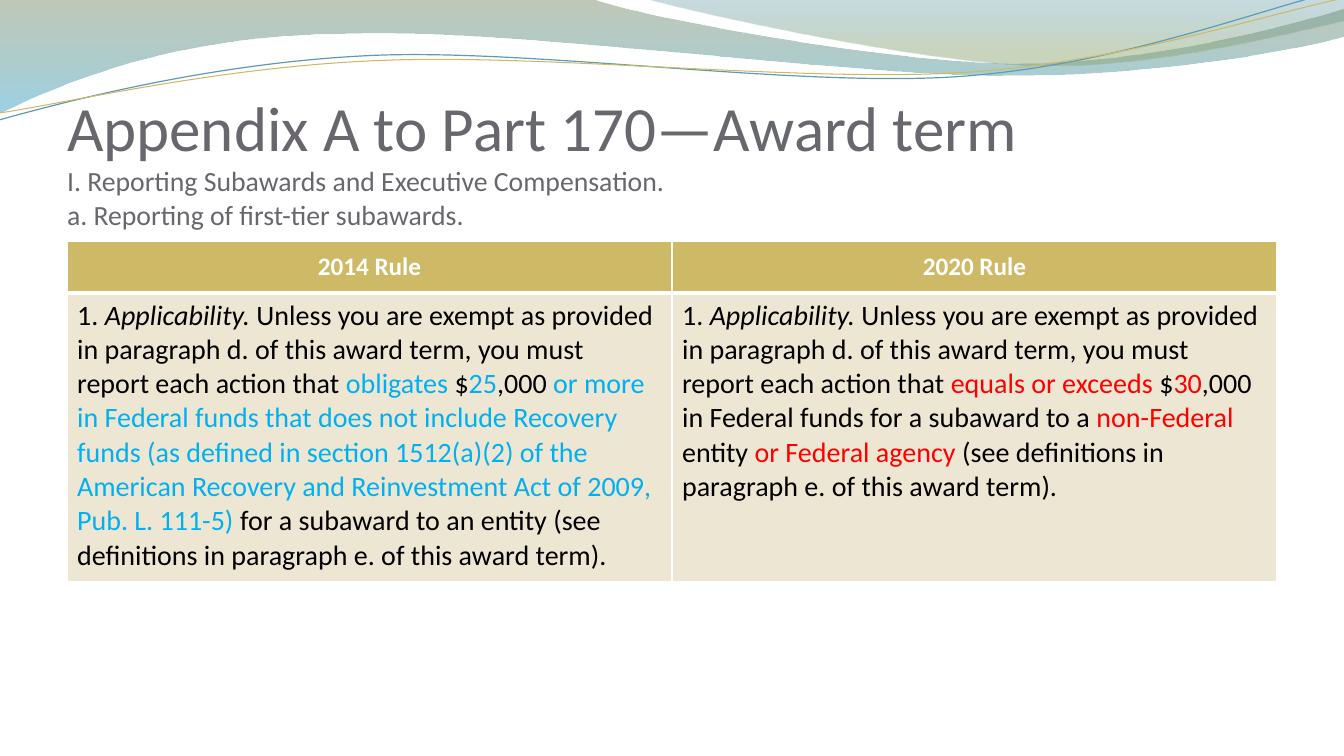
from lxml import etree
from pptx import Presentation
from pptx.dml.color import RGBColor
from pptx.enum.text import MSO_ANCHOR, MSO_AUTO_SIZE, PP_ALIGN
from pptx.oxml.ns import qn
from pptx.util import Inches, Pt

LEFT, CENTER = PP_ALIGN.LEFT, PP_ALIGN.CENTER
TOP, MIDDLE, BOTTOM = MSO_ANCHOR.TOP, MSO_ANCHOR.MIDDLE, MSO_ANCHOR.BOTTOM
NO_AUTOFIT = MSO_AUTO_SIZE.NONE

COLORS = {
    "white": "FFFFFF", "black": "000000", "title": "69676D",
    "gold": "CEB966", "sand": "EDE6D3", "teal": "5E9CB1",
    "removed": "00B0F0", "added": "FF0000",
    "olive": "74855E", "sky": "4AACCE", "sea": "45889F", "moss": "8AA36D",
}
SLIDE_WIDTH, CONTENT_WIDTH = Inches(13.33), Inches(12)
MARGIN = (SLIDE_WIDTH - CONTENT_WIDTH) // 2

# Each outline is a list of points (straight) and point triples (Bezier curves).
LEFT_WAVE = [
    (0, -0.01), (5.87, -0.01),
    ((6.34, 0.17), (8.85, 0.63), (10.11, 0.63)),
    ((11.38, 0.63), (12.78, 0.26), (13.33, 0.09)),
    (13.35, 0.36),
    ((13.11, 0.44), (11.6, 0.76), (9.94, 0.75)),
    ((8.29, 0.75), (5.09, 0.28), (3.43, 0.34)),
    ((1.72, 0.35), (0.61, 0.83), (-0.01, 1.13)),
]
RIGHT_WAVE = [
    (6.39, -0.01),
    ((6.79, 0.11), (9.09, 0.62), (10.25, 0.65)),
    ((11.41, 0.69), (12.82, 0.32), (13.33, 0.21)),
    (13.33, 0),
]
TEAL_LINE = [
    (-0.01, 1.19),
    ((0.64, 1.01), (2.11, 0.62), (3.69, 0.55)),
    ((5.27, 0.48), (7.9, 0.87), (9.5, 0.76)),
    ((11.1, 0.65), (12.52, 0.08), (13.31, -0.1)),
]
GOLD_LINE = [
    (0, 1.12),
    ((0.63, 1.03), (2.18, 0.66), (3.78, 0.6)),
    ((5.37, 0.53), (7.96, 0.82), (9.55, 0.72)),
    ((11.15, 0.62), (12.55, 0.14), (13.34, -0.02)),
]

TITLE_LINES = [
    ("Appendix A to Part 170—Award term ", 45),
    ("I. Reporting Subawards and Executive Compensation.", 19.8),
    ("a. Reporting of first-tier subawards.", 19.8),
]
RULE_OPENING = [
    ("1. ", "black"),
    ("Applicability. ", "italic"),
    ("Unless you are exempt as provided in paragraph d. of this award term, "
     "you must report each action that ", "black"),
]
RULES = {
    "2014 Rule": RULE_OPENING + [
        ("obligates ", "removed"), ("$", "black"), ("25", "removed"),
        (",000 ", "black"),
        ("or more in Federal funds that does not include Recovery funds "
         "(as defined in section 1512(a)(2) of the American Recovery and "
         "Reinvestment Act of 2009, Pub. L. 111-5) ", "removed"),
        ("for a subaward to an entity (see definitions in paragraph e. "
         "of this award term).", "black"),
    ],
    "2020 Rule": RULE_OPENING + [
        ("equals or exceeds ", "added"), ("$", "black"), ("30", "added"),
        (",000 in Federal funds for a subaward to a ", "black"),
        ("non-Federal ", "added"), ("entity ", "black"),
        ("or Federal agency ", "added"),
        ("(see definitions in paragraph e. of this award term).", "black"),
    ],
}


def rgb(color):
    return RGBColor.from_string(COLORS[color])


def emu(point):
    return Inches(point[0]), Inches(point[1])


class RuleSlide:
    font = "Calibri"

    def __init__(self, presentation):
        self.slide = presentation.slides.add_slide(presentation.slide_layouts[5])
        self.shapes = self.slide.shapes

    def style_run(self, run, size, color, bold=False, italic=False):
        run.font.name, run.font.size = self.font, Pt(size)
        run.font.bold, run.font.italic = bold, italic
        run.font.color.rgb = rgb(color)

    def curve(self, outline, closed):
        """Build the outline from end points, then bend its Bezier segments."""
        start, *steps = outline
        ends = [step if len(step) == 2 else step[-1] for step in steps]
        builder = self.shapes.build_freeform(*emu(start))
        builder.add_line_segments([emu(end) for end in ends], close=closed)
        shape = builder.convert_to_shape()
        shape.shadow.inherit = False
        segments = list(shape._element.spPr.iter(qn("a:lnTo")))
        for segment, step in zip(segments, steps):
            if len(step) == 2:
                continue
            bend = etree.Element(qn("a:cubicBezTo"))
            for x, y in map(emu, step):
                etree.SubElement(bend, qn("a:pt"),
                                 x=str(x - shape.left), y=str(y - shape.top))
            segment.getparent().replace(segment, bend)
        return shape

    def wave(self, outline, stops):
        """Add a filled wave; stops are (position, color, opacity percent)."""
        shape = self.curve(outline, True)
        shape.line.fill.background()
        shape.fill.gradient()
        shape.fill.gradient_angle = 270
        for stop, (position, color, _) in zip(shape.fill.gradient_stops, stops):
            stop.position = position
            stop.color.rgb = rgb(color)
        for element, (_, _, opacity) in zip(shape._element.spPr.iter(qn("a:srgbClr")), stops):
            etree.SubElement(element, qn("a:alpha"), val=str(opacity * 1000))

    def line(self, outline, color, width):
        shape = self.curve(outline, False)
        shape.fill.background()
        shape.line.color.rgb = rgb(color)
        shape.line.width = Pt(width)

    def title(self, lines):
        title = self.shapes.title
        self.shapes._spTree.append(title._element)  # in front of the waves
        title.left, title.top = MARGIN, Inches(1.04)
        title.width, title.height = CONTENT_WIDTH, Inches(1.25)
        frame = title.text_frame
        frame.text = "\v".join(text for text, _ in lines)
        frame.word_wrap, frame.auto_size = True, NO_AUTOFIT
        frame.vertical_anchor = BOTTOM
        frame.margin_left = frame.margin_right = frame.margin_bottom = 0
        frame.margin_top = Inches(0.05)
        paragraph = frame.paragraphs[0]
        paragraph.alignment = LEFT
        for run, (_, size) in zip(paragraph.runs, lines):
            self.style_run(run, size, "title")
        for line_break, (_, size) in zip(paragraph._p.iter(qn("a:br")), lines):
            etree.SubElement(line_break, qn("a:rPr"), sz=str(round(size * 100)))

    def borders(self, cell, widths):
        properties = cell._tc.get_or_add_tcPr()
        for side, width in zip("LRTB", widths):
            border = etree.SubElement(properties, qn(f"a:ln{side}"), w=str(Pt(width)))
            fill = etree.SubElement(border, qn("a:solidFill"))
            etree.SubElement(fill, qn("a:srgbClr"), val=COLORS["white"])

    def cell(self, cell, parts, fill, anchor, alignment, size, bold, widths):
        self.borders(cell, widths)
        cell.fill.solid()
        cell.fill.fore_color.rgb = rgb(fill)
        cell.vertical_anchor = anchor
        paragraph = cell.text_frame.paragraphs[0]
        paragraph.alignment = alignment
        for text, style in parts:
            run = paragraph.add_run()
            run.text = text
            italic = style == "italic"
            self.style_run(run, size, "black" if italic else style, bold, italic)

    def rules_table(self, rules):
        table = self.shapes.add_table(2, len(rules), MARGIN, Inches(2.39),
                                      CONTENT_WIDTH, Inches(3.38)).table
        table.rows[0].height, table.rows[1].height = Inches(0.52), Inches(2.86)
        for column, (heading, parts) in enumerate(rules.items()):
            self.cell(table.cell(0, column), [(heading, "white")], "gold",
                      MIDDLE, CENTER, 18, True, (1, 1, 1, 3))
            self.cell(table.cell(1, column), parts, "sand",
                      TOP, LEFT, 20, False, (1, 1, 1, 1))


def main():
    presentation = Presentation()
    presentation.slide_width, presentation.slide_height = SLIDE_WIDTH, Inches(7.5)
    page = RuleSlide(presentation)
    page.wave(LEFT_WAVE, [(0, "olive", 45), (1, "sky", 55)])
    page.wave(RIGHT_WAVE, [(0, "sea", 30), (0.8, "moss", 45)])
    page.line(TEAL_LINE, "teal", 0.85)
    page.line(GOLD_LINE, "gold", 0.75)
    page.title(TITLE_LINES)
    page.rules_table(RULES)
    presentation.save("out.pptx")


if __name__ == "__main__":
    main()
